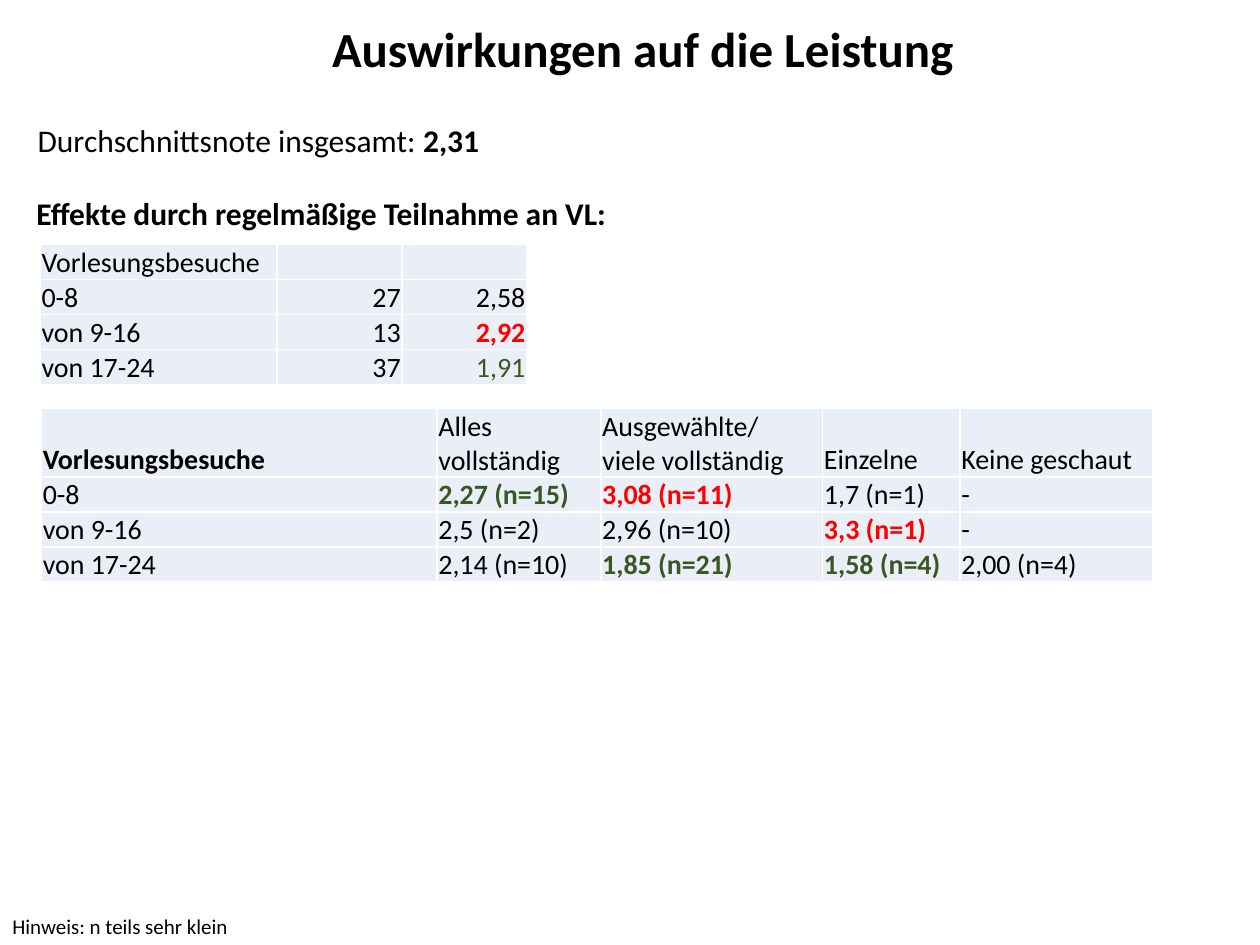
from dataclasses import dataclass

from lxml.etree import SubElement
from pptx import Presentation
from pptx.dml.color import RGBColor as Color
from pptx.enum.text import MSO_ANCHOR as Anchor, MSO_AUTO_SIZE as AutoSize, PP_ALIGN as Align
from pptx.oxml.ns import qn
from pptx.util import Inches, Pt


@dataclass(frozen=True)
class Theme:
    """Colours, font and type sizes of the slide."""
    font: str = "Calibri"
    ink: str = "000000"
    good: str = "385723"
    bad: str = "FF0000"
    cell: str = "EAEFF7"
    border: str = "FFFFFF"
    title: int = 28
    body: int = 18
    table: int = 16
    note: int = 12


@dataclass(frozen=True)
class Mark:
    """A table entry that is bold or coloured."""
    text: str
    color: str = Theme.ink
    bold: bool = True


class SlideBuilder:
    """Places elements on one slide with a grid of 100 columns and 75 rows."""

    def __init__(self, deck, theme):
        """Add a title-only slide and work out the grid step."""
        self.theme = theme
        self.step_x = deck.slide_width / 100
        self.step_y = deck.slide_height / 75
        self.slide = deck.slides.add_slide(deck.slide_layouts[5])

    def grid(self, column, row, columns, rows):
        """Turn grid units into left, top, width and height."""
        return (round(column * self.step_x), round(row * self.step_y),
                round(columns * self.step_x), round(rows * self.step_y))

    def style(self, para, size, bold=False, color=None, align=Align.LEFT):
        """Set the font and alignment of a paragraph."""
        para.alignment = align
        para.font.name = self.theme.font
        para.font.size = Pt(size)
        para.font.bold = bold
        para.font.color.rgb = Color.from_string(color or self.theme.ink)

    def title(self, text, place):
        """Move, fill and format the title placeholder."""
        box = self.slide.shapes.title
        box.left, box.top, box.width, box.height = self.grid(*place)
        frame = box.text_frame
        frame.text = text
        frame.word_wrap = True
        frame.auto_size = AutoSize.NONE
        frame.vertical_anchor = Anchor.TOP
        self.style(frame.paragraphs[0], self.theme.title, True, align=Align.CENTER)

    def text(self, text, place, size, bold=False, strong="", wrap=False):
        """Add a line of text that may end in a bold part."""
        frame = self.slide.shapes.add_textbox(*self.grid(*place)).text_frame
        frame.word_wrap = wrap
        para = frame.paragraphs[0]
        self.style(para, size, bold)
        para.add_run().text = text
        if strong:
            span = para.add_run()
            span.text = strong
            span.font.bold = True

    def table(self, entries, place, widths, heights, number_columns=()):
        """Add a table with a plain fill and thin borders."""
        table = self.slide.shapes.add_table(len(entries), len(widths), *self.grid(*place)).table
        table.first_row = table.horz_banding = False
        for column, width in zip(table.columns, widths):
            column.width = round(width * self.step_x)
        for row, height in zip(table.rows, heights):
            row.height = round(height * self.step_y)
        for row, line in zip(table.rows, entries):
            for index, (cell, entry) in enumerate(zip(row.cells, line)):
                align = Align.RIGHT if index in number_columns else Align.LEFT
                self.fill_cell(cell, entry, align)

    def fill_cell(self, cell, entry, align):
        """Write and format one table cell."""
        mark = entry if isinstance(entry, Mark) else Mark(entry, bold=False)
        cell.text = mark.text
        cell.vertical_anchor = Anchor.BOTTOM
        cell.margin_left = cell.margin_right = cell.margin_top = Inches(0.01)
        cell.margin_bottom = 0
        for para in cell.text_frame.paragraphs:
            self.style(para, self.theme.table, mark.bold, mark.color, align)
        properties = cell._tc.get_or_add_tcPr()
        for side in ("a:lnL", "a:lnR", "a:lnT", "a:lnB"):
            line = SubElement(properties, qn(side), w=str(Pt(1)))
            SubElement(SubElement(line, qn("a:solidFill")), qn("a:srgbClr"), val=self.theme.border)
        cell.fill.solid()
        cell.fill.fore_color.rgb = Color.from_string(self.theme.cell)


def main():
    """Build the slide and save it."""
    deck = Presentation()
    deck.slide_width, deck.slide_height = Inches(10), Inches(7.5)
    theme = Theme()
    page = SlideBuilder(deck, theme)
    page.title("Auswirkungen auf die Leistung", (13.2, 1, 75.6, 5.7))
    page.text("Hinweis: n teils sehr klein", (0, 72, 101.7, 3), theme.note, wrap=True)
    page.text("Durchschnittsnote insgesamt: ", (2, 9.1, 37.5, 4), theme.body, strong="2,31")
    page.text("Effekte durch regelmäßige Teilnahme an VL:", (1.9, 14.9, 47.7, 10.1), theme.body, bold=True)

    visits = ("0-8", "von 9-16", "von 17-24")
    grades = (
        ("27", "2,58"),
        ("13", Mark("2,92", theme.bad)),
        ("37", Mark("1,91", theme.good, bold=False)),
    )
    page.table(
        [("Vorlesungsbesuche", "", "")] + [(name, *line) for name, line in zip(visits, grades)],
        (3.2, 19.4, 38.6, 11.1), (18.8, 9.9, 9.9), [2.78] * 4, number_columns=(1, 2))

    header = (Mark("Vorlesungsbesuche"), "Alles vollständig", "Ausgewählte/\vviele vollständig",
              "Einzelne", "Keine geschaut")
    viewing = (
        (Mark("2,27 (n=15)", theme.good), Mark("3,08 (n=11)", theme.bad), "1,7 (n=1)", "-"),
        ("2,5 (n=2)", "2,96 (n=10)", Mark("3,3 (n=1)", theme.bad), "-"),
        ("2,14 (n=10)", Mark("1,85 (n=21)", theme.good), Mark("1,58 (n=4)", theme.good), "2,00 (n=4)"),
    )
    page.table(
        [header] + [(name, *line) for name, line in zip(visits, viewing)],
        (3.3, 32.4, 88.1, 13.8), (31.4, 13, 17.6, 10.9, 15.3), [5.46] + [2.78] * 3)
    deck.save("out.pptx")


if __name__ == "__main__":
    main()
